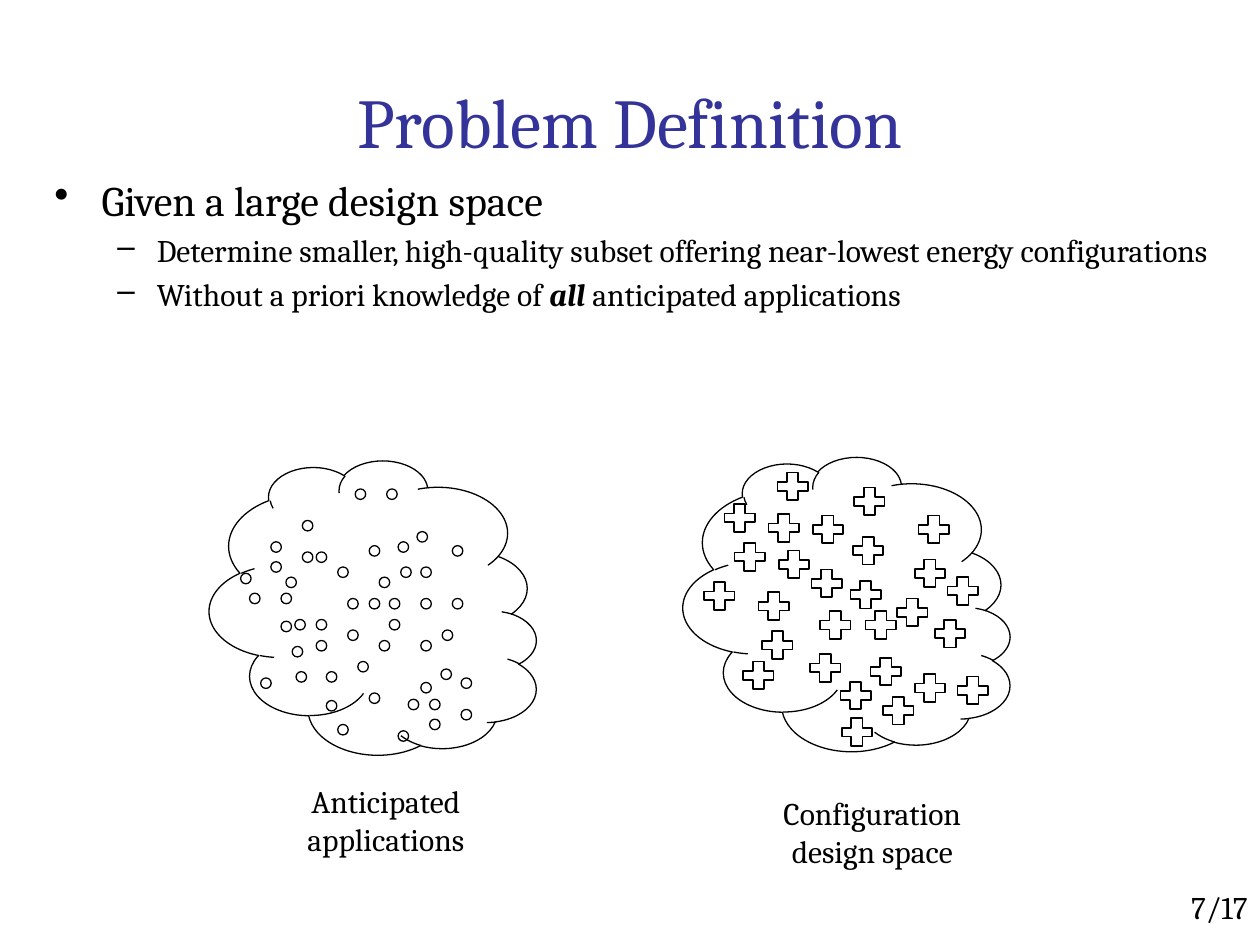
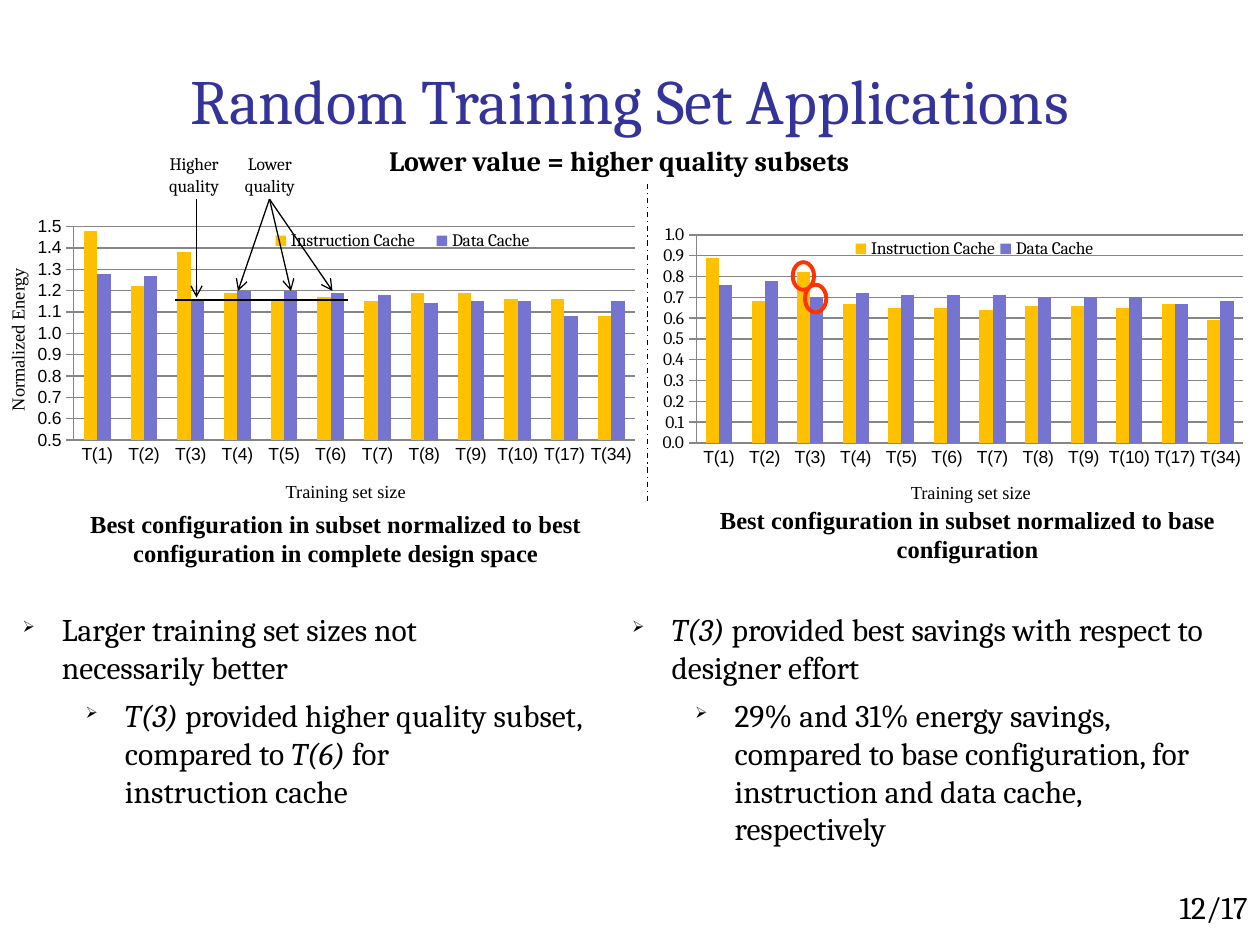
"""Build two slides on choosing configuration subsets from training applications."""
from dataclasses import dataclass

from lxml import etree
from pptx import Presentation
from pptx.chart.data import CategoryChartData
from pptx.dml.color import RGBColor
from pptx.enum.chart import XL_CHART_TYPE, XL_LEGEND_POSITION, XL_TICK_MARK
from pptx.enum.dml import MSO_LINE
from pptx.enum.shapes import MSO_CONNECTOR, MSO_SHAPE
from pptx.enum.text import MSO_ANCHOR, PP_ALIGN
from pptx.oxml.ns import qn
from pptx.util import Pt

LEFT, CENTER, RIGHT = PP_ALIGN.LEFT, PP_ALIGN.CENTER, PP_ALIGN.RIGHT
CLOUD, CROSS, OVAL = MSO_SHAPE.CLOUD, MSO_SHAPE.CROSS, MSO_SHAPE.OVAL
TOP, MIDDLE = MSO_ANCHOR.TOP, MSO_ANCHOR.MIDDLE


@dataclass(frozen=True)
class Theme:
    ink: str = "000000"
    paper: str = "FFFFFF"
    title: str = "333399"
    grid: str = "868686"
    highlight: str = "FF3300"
    series: tuple = ("FFC000", "7575D1")
    main: str = "Cambria"
    caption: str = "Times New Roman"
    axis: str = "Arial"
    lead_size: float = 24
    text_size: float = 18
    headline_size: float = 16
    caption_size: float = 14
    axis_title_size: float = 10.5
    small_size: float = 10
    thin: float = 0.75


THEME = Theme()

PROBLEM = [
    (0, [("Given a large design space", "")]),
    (1, [("Determine smaller, high-quality subset offering near-lowest energy configurations", "")]),
    (1, [("Without a priori knowledge of ", ""), ("all", "bi"), (" anticipated applications", "")]),
]
PROBLEM_LEVELS = [(27, 27, "•", THEME.lead_size), (58.5, 22.5, "–", THEME.text_size)]
FINDING_LEVELS = [(22.5, 22.5, "➢", THEME.text_size), (58.5, 22.5, "➢", THEME.text_size)]
FINDINGS = [
    ((5.8, 345, 360, 122), [
        (0, [("Larger training set sizes not \nnecessarily better", "")]),
        (1, [("T(3) ", "i"), ("provided higher quality subset, compared to ", ""),
             ("T(6) ", "i"), ("for \ninstruction cache", "")]),
    ]),
    ((354.2, 345, 360, 144), [
        (0, [("T(3)", "i"), (" provided best savings with respect to designer effort", "")]),
        (1, [("29% and 31% energy savings, compared to base configuration, for "
              "instruction and data cache, respectively", "")]),
    ]),
]

CLOUDS = [
    ((129.6, 254, 168, 187), "Anticipated applications", (151, 443.5, 139, 51)),
    ((400.3, 252, 168, 187), "Configuration design space", (429, 450, 139, 51)),
]
APPLICATION_ROWS = {
    279.4: [203, 221], 297.4: [172.8], 303.8: [238.3], 309.6: [154.8, 227.5],
    311.8: [211, 258.5], 315.4: [172.8, 180.7], 321: [154.8], 324: [193, 229, 240.5],
    327.6: [137.5], 329.8: [163.4, 216.7], 339: [142.6, 160.6],
    342: [198.7, 211, 222.5, 240.5, 258.5], 354: [168.5, 180.7, 222.5], 355: [160.6],
    360: [198.7, 252.7], 366: [180.7, 216.7, 240.5], 369.4: [167], 378: [204.5],
    382.3: [252], 383.8: [169.2, 186.5], 387.4: [149, 263.5], 390: [240.5],
    396: [211], 399.6: [233.3, 245.5], 400.3: [186.5], 405.4: [263.5],
    411: [245.5], 414: [193], 417.6: [227.5],
}
CONFIGURATIONS = [
    (495.4, 348.5), (513.4, 341.3), (498.2, 375.1), (523.4, 384.5), (469.4, 348.5),
    (488.9, 277.9), (488.2, 306), (436.3, 360), (486.7, 331.2), (481, 388.8),
    (523.4, 319), (535, 353.5), (525.6, 293.8), (464.4, 324.7), (445.7, 313.9),
    (420.5, 309.6), (425.5, 377.3), (463.7, 373), (465.1, 293.8), (434.2, 337.7),
    (481.7, 409.7), (439.9, 293), (414.7, 287.3), (445, 269.3), (505.4, 397.4),
    (403.2, 331.9), (547.9, 385.9), (542.2, 329),
]

TRAINING_SETS = [f"T({size})" for size in (*range(1, 11), 17, 34)]
CACHES = ("Instruction Cache", "Data Cache")
PLOT_LAYOUT = (0.082, 0.051, 0.901, 0.734)
CHARTS = [
    dict(place=(13, 121, 355.7, 166.3), scale=(0.5, 1.5), value_font=THEME.axis,
         legend=(0.38, 0.06, 0.46, 0.08),
         values=([1.48, 1.22, 1.38, 1.19, 1.15, 1.17, 1.15, 1.19, 1.19, 1.16, 1.16, 1.08],
                 [1.28, 1.27, 1.16, 1.2, 1.2, 1.19, 1.18, 1.14, 1.15, 1.15, 1.08, 1.15]),
         axis_title=(116.6, 270.7, 162, 19.4), caption_place=(30, 287.3, 324, 42.5),
         caption="Best configuration in subset normalized to best configuration "
                 "in complete design space"),
    dict(place=(369.4, 126, 347, 162), scale=(0, 1), value_font=THEME.main,
         legend=(0.335, 0.06, 0.41, 0.08),
         values=([0.89, 0.68, 0.82, 0.67, 0.65, 0.65, 0.64, 0.66, 0.66, 0.65, 0.67, 0.59],
                 [0.76, 0.78, 0.7, 0.72, 0.71, 0.71, 0.71, 0.7, 0.7, 0.7, 0.67, 0.68]),
         axis_title=(473.8, 271.4, 162, 19.4), caption_place=(401.8, 285, 302.4, 39),
         caption="Best configuration in subset normalized to base configuration"),
]
QUALITY_NOTES = [
    ("Higher quality", (85.7, 84.2, 50.4, 31.7), (112.3, 113.8), [(112.3, 170)]),
    ("Lower quality", (129, 84.2, 50.4, 31.7), (154, 113.8),
     [(136, 166.3), (190, 166.3), (166.3, 166.3)]),
]
RINGS = [(460, 162.7), (453, 149.8)]


def points(values):
    return [Pt(value) for value in values]


def style_font(font, size, name=THEME.main, color=THEME.ink, bold=None):
    font.size, font.name, font.bold = Pt(size), name, bold
    font.color.rgb = RGBColor.from_string(color)


def add_spans(para, spans):
    for text, flags in spans:
        for index, part in enumerate(text.split("\n")):
            if index:
                para.add_line_break()
            span = para.add_run()
            span.text = part
            if "b" in flags:
                span.font.bold = True
            if "i" in flags:
                span.font.italic = True


def add_box(page, place, anchor=TOP):
    box = page.shapes.add_textbox(*points(place))
    box.text_frame.word_wrap = True
    box.text_frame.vertical_anchor = anchor
    return box


def add_label(page, place, text, size, align=CENTER, anchor=TOP, **font):
    box = add_box(page, place, anchor)
    para = box.text_frame.paragraphs[0]
    para.alignment = align
    add_spans(para, [(text, "")])
    style_font(para.font, size, **font)
    return box


def add_bullets(page, place, items, levels, gap, bullet_percent=100):
    frame = add_box(page, place).text_frame
    for index, (level, spans) in enumerate(items):
        para = frame.add_paragraph() if index else frame.paragraphs[0]
        margin, hanging, mark, size = levels[level]
        para.level = level
        para.space_before = Pt(gap if index else 0)
        properties = para._p.get_or_add_pPr()
        properties.set("marL", str(Pt(margin)))
        properties.set("indent", str(-Pt(hanging)))
        etree.SubElement(properties, qn("a:buSzPct")).set("val", str(bullet_percent * 1000))
        etree.SubElement(properties, qn("a:buChar")).set("char", mark)
        style_font(para.font, size)
        add_spans(para, spans)


def add_outline(shapes, kind, place, color=THEME.ink, width=THEME.thin, fill=None, turn=0):
    shape = shapes.add_shape(kind, *points(place))
    shape.shadow.inherit = False
    shape.rotation = turn
    if fill:
        shape.fill.solid()
        shape.fill.fore_color.rgb = RGBColor.from_string(fill)
    else:
        shape.fill.background()
    shape.line.color.rgb = RGBColor.from_string(color)
    shape.line.width = Pt(width)
    return shape


def add_line(page, start, end, width=THEME.thin, arrow=False, dash=None):
    line = page.shapes.add_connector(MSO_CONNECTOR.STRAIGHT, *points((*start, *end)))
    line.line.color.rgb = RGBColor.from_string(THEME.ink)
    line.line.width = Pt(width)
    if dash:
        line.line.dash_style = dash
    if arrow:
        etree.SubElement(line.line._get_or_add_ln(), qn("a:tailEnd")).set("type", "arrow")
    etree.SubElement(line._element.spPr, qn("a:effectLst"))


def set_layout(element, values, inner=False):
    for old in element.findall(qn("c:layout")):
        element.remove(old)
    layout = etree.Element(qn("c:layout"))
    manual = etree.SubElement(layout, qn("c:manualLayout"))
    settings = [("layoutTarget", "inner")] if inner else []
    settings += [("xMode", "edge"), ("yMode", "edge"), *zip("xywh", values)]
    for name, value in settings:
        etree.SubElement(manual, qn("c:" + name)).set("val", str(value))
    if inner:
        element.insert(0, layout)
    else:
        element.find(qn("c:legendPos")).addnext(layout)


def add_energy_chart(page, entry):
    data = CategoryChartData(number_format="0.00")
    data.categories = TRAINING_SETS
    for name, values in zip(CACHES, entry["values"]):
        data.add_series(name, values)
    chart = page.shapes.add_chart(
        XL_CHART_TYPE.COLUMN_CLUSTERED, *points(entry["place"]), data).chart
    chart.has_title = False
    style_font(chart.font, THEME.small_size)
    chart.has_legend = True
    chart.legend.position = XL_LEGEND_POSITION.RIGHT
    chart.legend.include_in_layout = False
    style_font(chart.legend.font, THEME.small_size)
    set_layout(chart.legend._element, entry["legend"])
    plot = chart.plots[0]
    plot.gap_width, plot.overlap, plot.vary_by_categories = 150, 0, False
    set_layout(chart._chartSpace.chart.plotArea, PLOT_LAYOUT, inner=True)
    for series, color in zip(plot.series, THEME.series):
        series.format.fill.solid()
        series.format.fill.fore_color.rgb = RGBColor.from_string(color)
    category, value = chart.category_axis, chart.value_axis
    category.major_tick_mark = XL_TICK_MARK.NONE
    value.major_tick_mark = XL_TICK_MARK.OUTSIDE
    value.minimum_scale, value.maximum_scale = entry["scale"]
    value.major_unit = 0.1
    value.tick_labels.number_format = "0.0"
    value.tick_labels.number_format_is_linked = False
    value.has_major_gridlines = True
    style_font(category.tick_labels.font, THEME.small_size, THEME.axis)
    style_font(value.tick_labels.font, THEME.small_size, entry["value_font"])
    for part in (category, value, value.major_gridlines):
        part.format.line.color.rgb = RGBColor.from_string(THEME.grid)
        part.format.line.width = Pt(THEME.thin)


def add_page(deck, title, title_place, title_size, number):
    page = deck.slides.add_slide(deck.slide_layouts[6])
    add_label(page, (570, 504, 150, 36), f"{number}/17", THEME.text_size, RIGHT)
    add_label(page, title_place, title, title_size, anchor=MIDDLE, color=THEME.title)
    return page


def build_problem(deck):
    page = add_page(deck, "Problem Definition", (54, 24, 612, 90), 40, 7)
    add_bullets(page, (24, 96, 684, 114), PROBLEM, PROBLEM_LEVELS, 3.6)
    for place, label, label_place in CLOUDS:
        add_outline(page.shapes, CLOUD, place, fill=THEME.paper, turn=90)
        add_label(page, label_place, label, THEME.text_size)
    for left, top in CONFIGURATIONS:
        cross = add_outline(page.shapes, CROSS, (left, top, 15.8, 17.3), width=1, turn=90)
        cross.adjustments[0] = 0.34
    applications = page.shapes.add_group_shape()
    for top, lefts in APPLICATION_ROWS.items():
        for left in lefts:
            add_outline(applications.shapes, OVAL, (left, top, 6, 6))


def build_training(deck):
    page = add_page(deck, "Random Training Set Applications", (0, 12, 720, 90), 36, 12)
    for entry in CHARTS:
        add_energy_chart(page, entry)
        add_label(page, entry["axis_title"], "Training set size",
                  THEME.axis_title_size, name=THEME.caption)
        add_label(page, entry["caption_place"], entry["caption"],
                  THEME.caption_size, name=THEME.caption, bold=True)
    energy = add_label(page, (-71.3, 184.3, 162, 19.4), "Normalized Energy",
                       THEME.axis_title_size, name=THEME.caption)
    energy.rotation = 270
    for text, place, start, ends in QUALITY_NOTES:
        add_label(page, place, text, THEME.small_size)
        for end in ends:
            add_line(page, start, end, arrow=True)
    add_line(page, (100, 171.4), (198.7, 171.4), width=1.5)
    add_label(page, (215.3, 78.5, 281, 26.6), "Lower value = higher quality subsets",
              THEME.headline_size, LEFT, bold=True)
    for left, top in RINGS:
        add_outline(page.shapes, OVAL, (left, top, 12.2, 15.8), THEME.highlight, 2.25)
    add_line(page, (370, 105), (370, 288), dash=MSO_LINE.DASH_DOT)
    for place, items in FINDINGS:
        add_bullets(page, place, items, FINDING_LEVELS, 6, 50)


def main():
    deck = Presentation()
    deck.slide_width, deck.slide_height = Pt(720), Pt(540)
    build_problem(deck)
    build_training(deck)
    deck.save("out.pptx")


if __name__ == "__main__":
    main()
